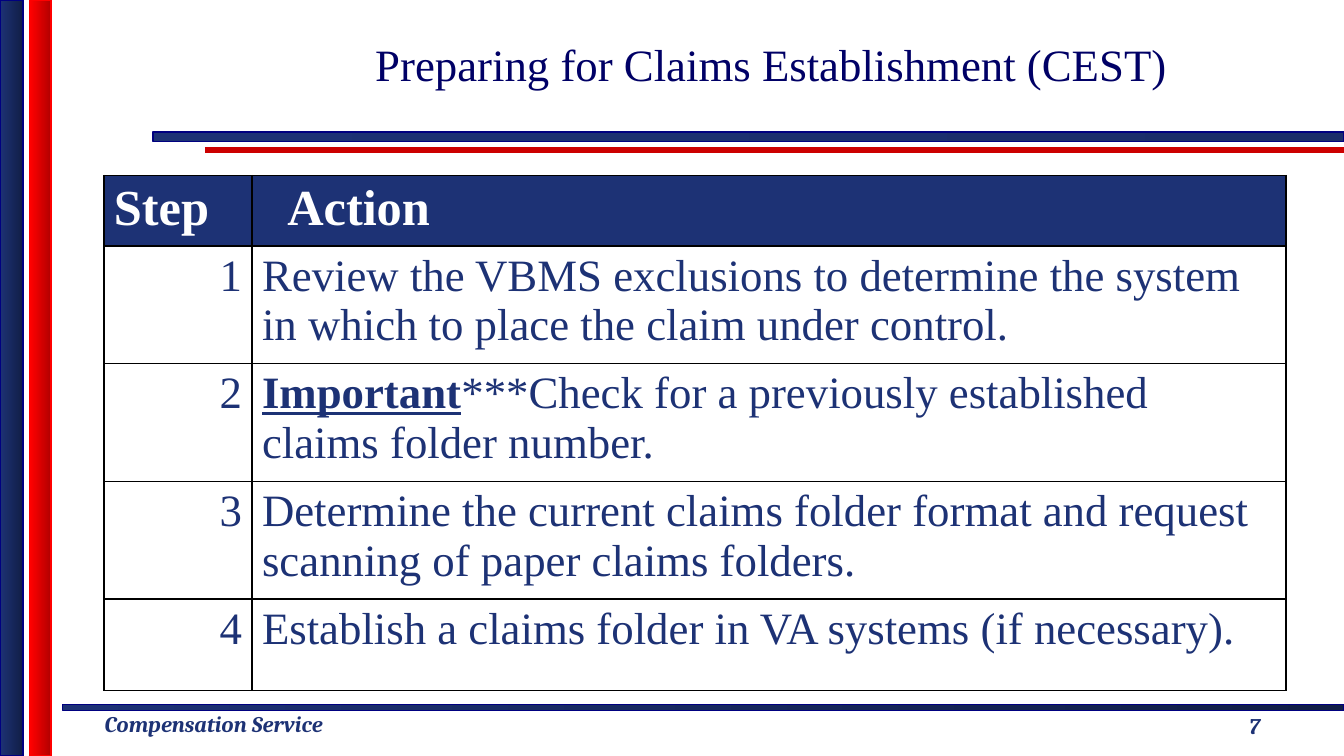
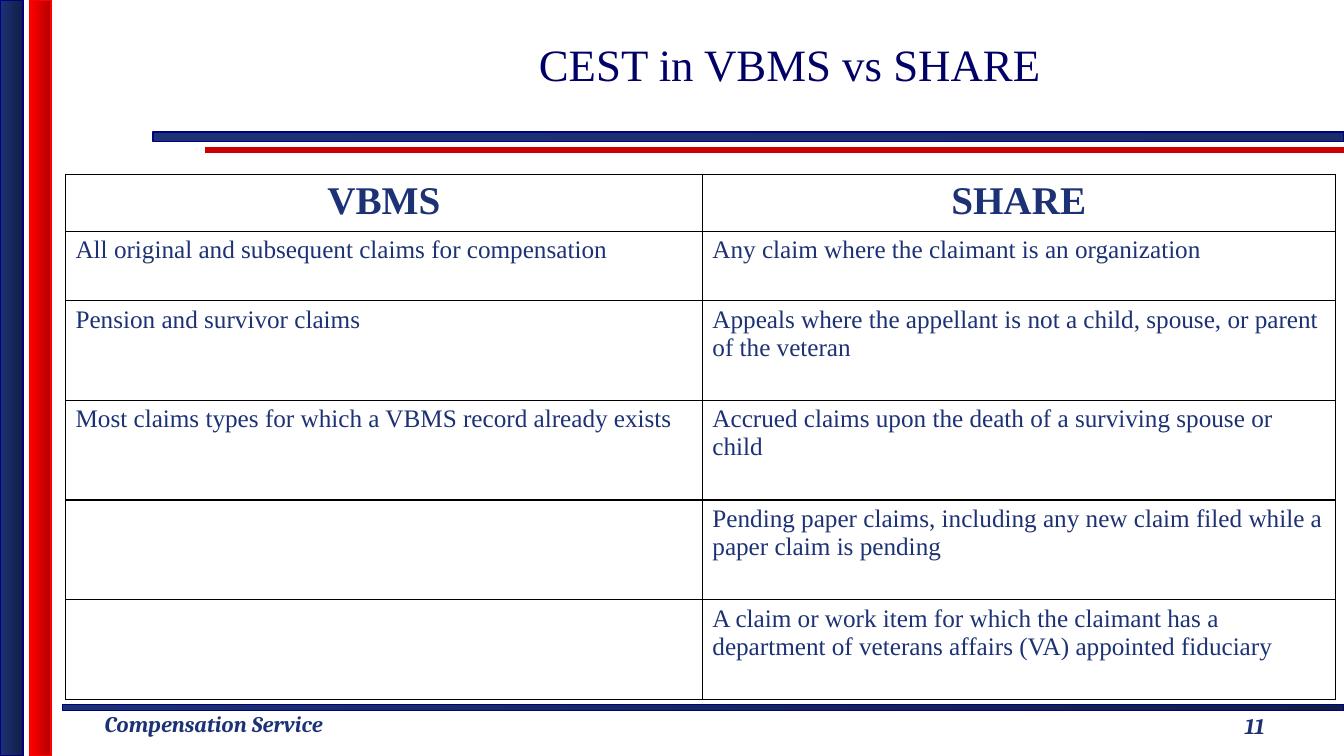
from dataclasses import dataclass

from lxml import etree
from pptx import Presentation
from pptx.dml.color import RGBColor
from pptx.enum.shapes import MSO_CONNECTOR, MSO_SHAPE
from pptx.enum.text import MSO_ANCHOR, PP_ALIGN
from pptx.oxml import parse_xml
from pptx.oxml.ns import nsdecls, qn
from pptx.util import Cm, Pt

RECT = MSO_SHAPE.RECTANGLE
STRAIGHT = MSO_CONNECTOR.STRAIGHT
LEFT, CENTER, RIGHT = PP_ALIGN.LEFT, PP_ALIGN.CENTER, PP_ALIGN.RIGHT
TOP, MIDDLE = MSO_ANCHOR.TOP, MSO_ANCHOR.MIDDLE

SLIDE_W, SLIDE_H = 33.87, 19.05


@dataclass(frozen=True)
class Theme:
    navy: str = "1D3275"
    navy_mid: str = "1A2D69"
    navy_dark: str = "111E46"
    navy_line: str = "000080"
    red: str = "FF0000"
    red_dark: str = "B20000"
    red_line: str = "CC0000"
    title: str = "000066"
    white: str = "FFFFFF"
    black: str = "000000"
    serif: str = "Times New Roman"
    footer_font: str = "Cambria"
    title_pt: int = 32
    footer_pt: int = 16


T = Theme()


@dataclass(frozen=True)
class Style:
    size: int
    color: str = T.navy
    font: str = T.serif
    bold: bool = False
    italic: bool = False


@dataclass(frozen=True)
class Run:
    text: str
    strong: bool = False  # bold and underlined


@dataclass(frozen=True)
class Band:
    left: float
    top: float
    width: float
    height: float
    start: str
    end: str
    line: str


@dataclass(frozen=True)
class Column:
    width: float
    align: PP_ALIGN = LEFT
    head_align: PP_ALIGN = LEFT
    head_indent: float = 0


@dataclass(frozen=True)
class Grid:
    left: float
    top: float
    columns: list[Column]
    heights: list[float]
    head: Style
    body: Style
    head_fill: str
    rows: list[list[str | list[Run]]]


@dataclass(frozen=True)
class Page:
    title: str
    title_width: float
    number: int
    grid: Grid


TITLE = Style(T.title_pt, T.title)
FOOTER = Style(T.footer_pt, font=T.footer_font, bold=True, italic=True)

BANDS = [
    Band(1.57, 17.75, SLIDE_W - 1.57, 0.15, T.navy, T.navy_dark, T.navy_line),
    Band(3.86, 3.33, SLIDE_W - 3.86, 0.23, T.navy, T.navy_mid, T.navy_line),
    Band(0, 0, 0.58, SLIDE_H, T.navy, T.navy_dark, T.navy_line),
    Band(0.76, 0, 0.53, SLIDE_H, T.red, T.red_dark, T.red),
]

PAGES = [
    Page("Preparing for Claims Establishment (CEST)", 27, 7, Grid(
        2.62, 4.42,
        [Column(3.73, align=RIGHT), Column(26.06, head_indent=0.64)],
        [1.45] + [2.69] * 3 + [2.31],
        Style(36, T.white, bold=True), Style(32), T.navy,
        [
            ["Step", "Action"],
            ["1", "Review the VBMS exclusions to determine the system "
                  "in which to place the claim under control."],
            ["2", [Run("Important", strong=True),
                   Run("***Check for a previously established claims folder number.")]],
            ["3", "Determine the current claims folder format and request "
                  "scanning of paper claims folders."],
            ["4", "Establish a claims folder in VA systems (if necessary)."],
        ])),
    Page("CEST in VBMS vs SHARE", 27.93, 11, Grid(
        1.65, 4.39,
        [Column(16.05, head_align=CENTER), Column(15.95, head_align=CENTER)],
        [1.42, 1.75] + [2.51] * 4,
        Style(28, bold=True), Style(18), T.white,
        [
            ["VBMS", "SHARE"],
            ["All original and subsequent claims for compensation",
             "Any claim where the claimant is an organization"],
            ["Pension and survivor claims",
             "Appeals where the appellant is not a child, spouse, or parent of the veteran"],
            ["Most claims types for which a VBMS record already exists",
             "Accrued claims upon the death of a surviving spouse or child"],
            ["", "Pending paper claims, including any new claim filed while a "
                 "paper claim is pending"],
            ["", "A claim or work item for which the claimant has a "
                 "department of veterans affairs (VA) appointed fiduciary"],
        ])),
]


def rgb(value: str) -> RGBColor:
    return RGBColor.from_string(value)


def write(tf, content: str | list[Run], style: Style, align: PP_ALIGN) -> None:
    p = tf.paragraphs[0]
    p.alignment = align
    runs = [Run(content)] if isinstance(content, str) else content
    for run in runs:
        if not run.text:
            continue
        r = p.add_run()
        r.text = run.text
        r.font.name, r.font.size = style.font, Pt(style.size)
        r.font.color.rgb = rgb(style.color)
        r.font.bold = style.bold or run.strong
        r.font.italic = style.italic
        r.font.underline = run.strong


def add_text(s, left: float, top: float, width: float, height: float, text: str,
             style: Style, align: PP_ALIGN = CENTER, anchor: MSO_ANCHOR = MIDDLE,
             wrap: bool = True) -> None:
    tf = s.shapes.add_textbox(Cm(left), Cm(top), Cm(width), Cm(height)).text_frame
    tf.word_wrap = wrap
    tf.vertical_anchor = anchor
    write(tf, text, style, align)


def add_band(s, band: Band) -> None:
    sp = s.shapes.add_shape(RECT, Cm(band.left), Cm(band.top),
                            Cm(band.width), Cm(band.height))
    sp.shadow.inherit = False
    sp.fill.gradient()
    sp.fill.gradient_angle = 0
    for stop, color, position in zip(sp.fill.gradient_stops, (band.start, band.end), (0, 1)):
        stop.color.rgb = rgb(color)
        stop.position = position
    sp.line.color.rgb = rgb(band.line)
    sp.line.width = Pt(1)


def add_frame(s, page: Page) -> None:
    # Red rule under the title
    rule = s.shapes.add_connector(STRAIGHT, Cm(5.16), Cm(3.78), Cm(SLIDE_W), Cm(3.78))
    rule.line.color.rgb = rgb(T.red_line)
    rule.line.width = Pt(4)
    etree.SubElement(rule._element.spPr, qn("a:effectLst"))
    # Bands, title and footer
    for band in BANDS:
        add_band(s, band)
    add_text(s, 5.94, 0, page.title_width, 3.2, page.title, TITLE)
    add_text(s, 2.39, 17.78, 7.16, 0.94, "Compensation Service", FOOTER,
             LEFT, TOP, wrap=False)
    add_text(s, 29.36, 17.65, 4.52, 1.27, str(page.number), FOOTER)


def add_borders(cell) -> None:
    tc_pr = cell._tc.get_or_add_tcPr()
    for side in ("lnL", "lnR", "lnT", "lnB"):
        tc_pr.append(parse_xml(
            f'<a:{side} {nsdecls("a")} w="{Pt(1)}"><a:solidFill>'
            f'<a:srgbClr val="{T.black}"/></a:solidFill></a:{side}>'))


def add_grid(s, grid: Grid) -> None:
    table = s.shapes.add_table(
        len(grid.rows), len(grid.columns), Cm(grid.left), Cm(grid.top),
        Cm(sum(c.width for c in grid.columns)), Cm(sum(grid.heights))).table
    table.first_row = table.horz_banding = False
    for i, column in enumerate(grid.columns):
        table.columns[i].width = Cm(column.width)
    for i, (height, texts) in enumerate(zip(grid.heights, grid.rows)):
        table.rows[i].height = Cm(height)
        is_head = i == 0
        for j, (column, text) in enumerate(zip(grid.columns, texts)):
            cell = table.cell(i, j)
            add_borders(cell)
            cell.fill.solid()
            cell.fill.fore_color.rgb = rgb(grid.head_fill if is_head else T.white)
            if is_head:
                cell.margin_left = Cm(0.25 + column.head_indent)
            write(cell.text_frame, text, grid.head if is_head else grid.body,
                  column.head_align if is_head else column.align)


def main() -> None:
    prs = Presentation()
    prs.slide_width, prs.slide_height = Cm(SLIDE_W), Cm(SLIDE_H)
    for page in PAGES:
        s = prs.slides.add_slide(prs.slide_layouts[6])
        add_frame(s, page)
        add_grid(s, page.grid)
    prs.save("out.pptx")


if __name__ == "__main__":
    main()
